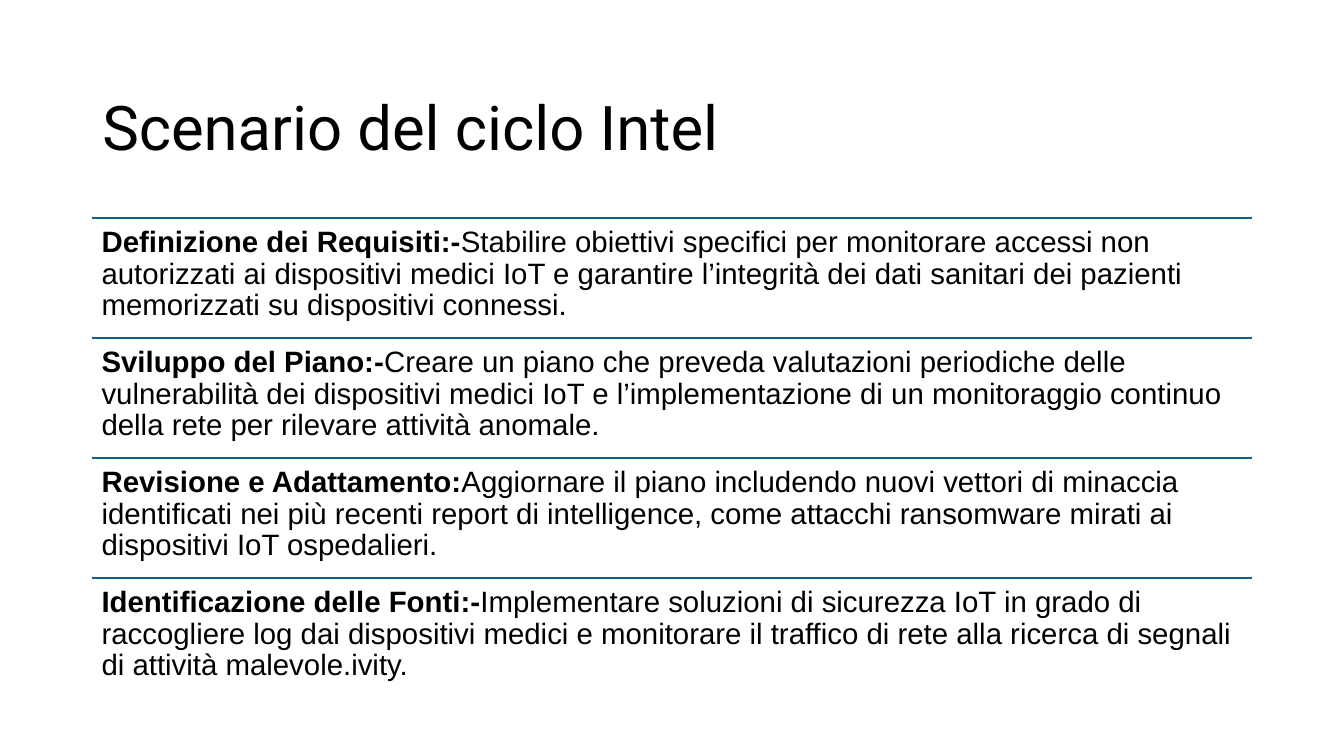
from lxml.etree import SubElement
from pptx import Presentation
from pptx.dml.color import RGBColor
from pptx.enum.shapes import MSO_CONNECTOR as Connector
from pptx.enum.text import MSO_ANCHOR as Anchor, MSO_AUTO_SIZE as AutoSize, PP_ALIGN as Align
from pptx.oxml.ns import qn
from pptx.util import Cm, Pt

COLORS = {"background": "FFFFFF", "text": "000000", "rule": "126082"}

TITLE_FONT = {"name": "Roboto", "size": Pt(44), "bold": False}
PHASE_FONT = {"name": "Arial", "size": Pt(21)}
PARAGRAPH = {"alignment": Align.LEFT, "line_spacing": 0.9, "space_before": Pt(0)}
TITLE_FRAME = {
    "word_wrap": True, "auto_size": AutoSize.NONE, "vertical_anchor": Anchor.MIDDLE,
    "margin_left": Cm(0.25), "margin_right": Cm(0.25),
    "margin_top": Cm(0.13), "margin_bottom": Cm(0.13),
}
PHASE_FRAME = {
    "word_wrap": True, "auto_size": AutoSize.NONE, "vertical_anchor": Anchor.TOP,
    "margin_left": Cm(0.23), "margin_right": Cm(0.23),
    "margin_top": Cm(0.23), "margin_bottom": Cm(0.23),
}

PHASES = [
    ("Definizione dei Requisiti:-",
     "Stabilire obiettivi specifici per monitorare accessi non autorizzati ai dispositivi "
     "medici IoT e garantire l’integrità dei dati sanitari dei pazienti memorizzati su "
     "dispositivi connessi."),
    ("Sviluppo del Piano:-",
     "Creare un piano che preveda valutazioni periodiche delle vulnerabilità dei dispositivi "
     "medici IoT e l’implementazione di un monitoraggio continuo della rete per rilevare "
     "attività anomale."),
    ("Revisione e Adattamento:",
     "Aggiornare il piano includendo nuovi vettori di minaccia identificati nei più recenti "
     "report di intelligence, come attacchi ransomware mirati ai dispositivi IoT ospedalieri."),
    ("Identificazione delle Fonti:-",
     "Implementare soluzioni di sicurezza IoT in grado di raccogliere log dai dispositivi "
     "medici e monitorare il traffico di rete alla ricerca di segnali di attività "
     "malevole.ivity."),
]


def apply(target, values):
    for attribute, value in values.items():
        setattr(target, attribute, value)


def color(name):
    return RGBColor.from_string(COLORS[name])


def add_run(paragraph, wording, font_values):
    run = paragraph.add_run()
    run.text = wording
    apply(run.font, font_values)
    run.font.color.rgb = color("text")


def place_title(slide, left, top, width, height):
    title = slide.shapes.title
    apply(title, {"left": left, "top": top, "width": width, "height": height})
    apply(title.text_frame, TITLE_FRAME)
    heading = title.text_frame.paragraphs[0]
    apply(heading, PARAGRAPH)
    add_run(heading, "Scenario del ciclo Intel", TITLE_FONT)


def place_phase(slide, name, description, left, top, width, height):
    rule = slide.shapes.add_connector(Connector.STRAIGHT, left, top, left + width, top)
    rule.line.color.rgb = color("rule")
    rule.line.width = Pt(1.5)
    SubElement(rule.element.spPr, qn("a:effectLst"))

    phase = slide.shapes.add_textbox(left, top, width, height)
    apply(phase.text_frame, PHASE_FRAME)
    paragraph = phase.text_frame.paragraphs[0]
    apply(paragraph, PARAGRAPH)
    add_run(paragraph, name, {**PHASE_FONT, "bold": True})
    add_run(paragraph, description, {**PHASE_FONT, "bold": False})


def place_phases(slide, left, top, width, height):
    row_height = height // len(PHASES)
    for row, (name, description) in enumerate(PHASES):
        place_phase(slide, name, description, left, top + row * row_height, width, row_height)


def main():
    deck = Presentation()
    apply(deck, {"slide_width": Cm(33.87), "slide_height": Cm(19.05)})
    slide = deck.slides.add_slide(deck.slide_layouts[5])
    slide.background.fill.solid()
    slide.background.fill.fore_color.rgb = color("background")
    left, width = Cm(2.33), Cm(29.21)
    place_title(slide, left, Cm(1.45), width, Cm(3.68))
    place_phases(slide, left, Cm(5.49), width, Cm(12.09))
    deck.save("out.pptx")


if __name__ == "__main__":
    main()
